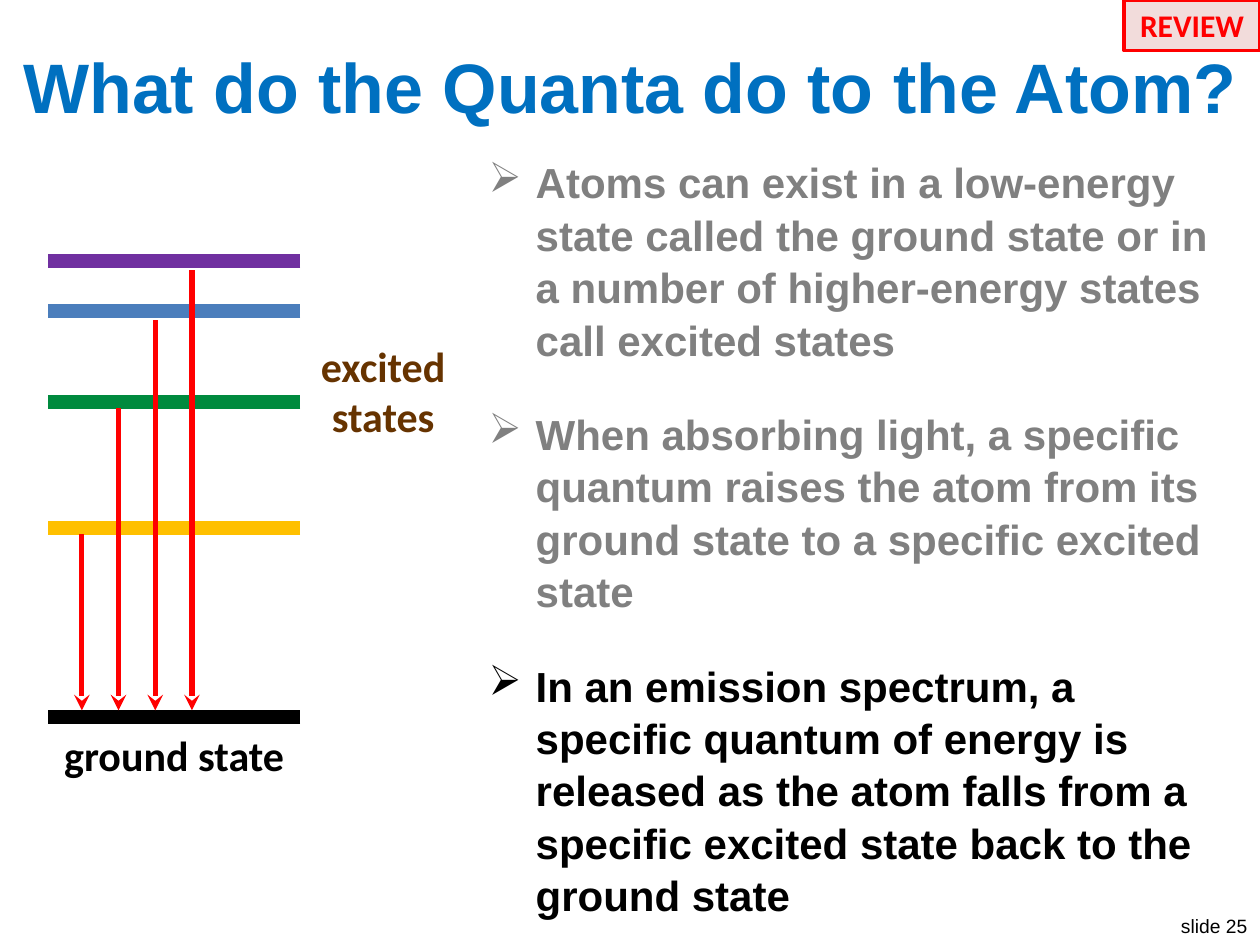
from dataclasses import dataclass

from lxml.etree import SubElement
from pptx import Presentation
from pptx.dml.color import RGBColor
from pptx.enum.shapes import MSO_CONNECTOR, MSO_SHAPE
from pptx.enum.text import MSO_ANCHOR, PP_ALIGN
from pptx.oxml.ns import qn
from pptx.util import Cm, Pt


@dataclass(frozen=True)
class Theme:
    head: str = "Arial"
    label: str = "Calibri"
    title: str = "0070C0"
    ink: str = "000000"
    muted: str = "808080"
    brown: str = "663300"
    red: str = "FF0000"
    pink: str = "F2DCDB"
    title_size: int = 40
    body_size: int = 24
    tag_size: int = 18
    foot_size: int = 11


T = Theme()

# Excited states, highest first: drop below the top level, colour, gap to arrow (cm)
LEVELS = [(0, "7030A0", 0.18), (1.01, "4B7EBC", 0.18),
          (2.84, "008A3E", 0.13), (5.38, "FFC000", 0.13)]
GROUND_DROP = 9.19

POINTS = [
    ("Atoms can exist in a low-energy state called the ground state or in "
     "a number of higher-energy states call excited states", T.muted),
    ("When absorbing light, a specific quantum raises the atom from its "
     "ground state to a specific excited state", T.muted),
    ("In an emission spectrum, a specific quantum of energy is released as "
     "the atom falls from a specific excited state back to the ground state", T.ink),
]


def write(p, text, size, font, color, bold=True, **fmt):
    r = p.add_run()
    r.text = text
    for key, value in dict(size=Pt(size), name=font, bold=bold).items():
        setattr(r.font, key, value)
    r.font.color.rgb = RGBColor.from_string(color)
    for key, value in fmt.items():
        setattr(p, key, value)


def add_text(shapes, box, lines, *style, align=PP_ALIGN.CENTER, wrap=True,
             anchor=MSO_ANCHOR.TOP, **fmt):
    tf = shapes.add_textbox(*map(Cm, box)).text_frame
    tf.word_wrap, tf.vertical_anchor = wrap, anchor
    for i, line in enumerate(lines):
        p = tf.add_paragraph() if i else tf.paragraphs[0]
        write(p, line, *style, alignment=align, **fmt)


def add_line(shapes, x1, y1, x2, y2, color, width, head=None):
    cx = shapes.add_connector(MSO_CONNECTOR.STRAIGHT, *map(Cm, (x1, y1, x2, y2)))
    cx.line.color.rgb = RGBColor.from_string(color)
    cx.line.width = Pt(width)
    if head:
        SubElement(cx.line._get_or_add_ln(), qn("a:headEnd"), type=head)
    SubElement(cx._element.spPr, qn("a:effectLst"))


def add_bullets(s, box):
    tf = s.shapes.add_textbox(*map(Cm, box)).text_frame
    tf.word_wrap = True
    for i, (text, color) in enumerate(POINTS):
        p = tf.add_paragraph() if i else tf.paragraphs[0]
        write(p, text, T.body_size, T.head, color, line_spacing=1.04,
              space_before=Pt(24 if i else 0))
        pPr = p._p.get_or_add_pPr()
        pPr.set("marL", str(Cm(0.95)))
        pPr.set("indent", str(-Cm(0.95)))
        SubElement(pPr, qn("a:buChar"), char="➢")


def add_diagram(s, box):
    left, top, width = box
    ground = top + GROUND_DROP

    # Energy levels and their labels
    g = s.shapes.add_group_shape().shapes
    for drop, color, _ in LEVELS + [(GROUND_DROP, T.ink, 0)]:
        add_line(g, left + width, top + drop, left, top + drop, color, 8)
    add_text(g, (left, ground + 0.13, width, 1.27), ["ground state"],
             T.body_size, T.label, T.ink, wrap=False)
    add_text(g, (left + width + 0.15, top + 1.47, 3.05, 2.31), ["excited", "states"],
             T.body_size, T.label, T.brown, wrap=False)

    # One emission arrow from each excited state, lowest first
    for i, (drop, _, gap) in enumerate(reversed(LEVELS)):
        x = left + 0.68 + 0.74 * i
        add_line(s.shapes, x, ground - 0.13, x, top + drop + gap, T.red, 3, "stealth")


def add_tag(s, box):
    sp = s.shapes.add_shape(MSO_SHAPE.RECTANGLE, *map(Cm, box))
    sp.shadow.inherit = False
    sp.fill.solid()
    sp.fill.fore_color.rgb = RGBColor.from_string(T.pink)
    sp.line.color.rgb = RGBColor.from_string(T.red)
    sp.line.width = Pt(2.25)
    write(sp.text_frame.paragraphs[0], "REVIEW", T.tag_size, T.label, T.red,
          alignment=PP_ALIGN.CENTER)


def main():
    prs = Presentation()
    prs.slide_width, prs.slide_height = Cm(25.4), Cm(19.05)
    s = prs.slides.add_slide(prs.slide_layouts[6])

    # Footer
    add_text(s.shapes, (23.5, 18.31, 1.9, 0.74), ["slide 25"], T.foot_size, T.head,
             T.ink, False, align=PP_ALIGN.RIGHT, wrap=False)
    # Content
    add_bullets(s, (9.6, 3, 15.11, 15.14))
    add_diagram(s, (0.97, 5.26, 5.08))
    # Title and tag
    add_text(s.shapes, (0, 0.71, 25.4, 2.03), ["What do the Quanta do to the Atom?"],
             T.title_size, T.head, T.title, anchor=MSO_ANCHOR.MIDDLE)
    add_tag(s, (22.66, 0, 2.74, 1.02))
    prs.save("out.pptx")


if __name__ == "__main__":
    main()
